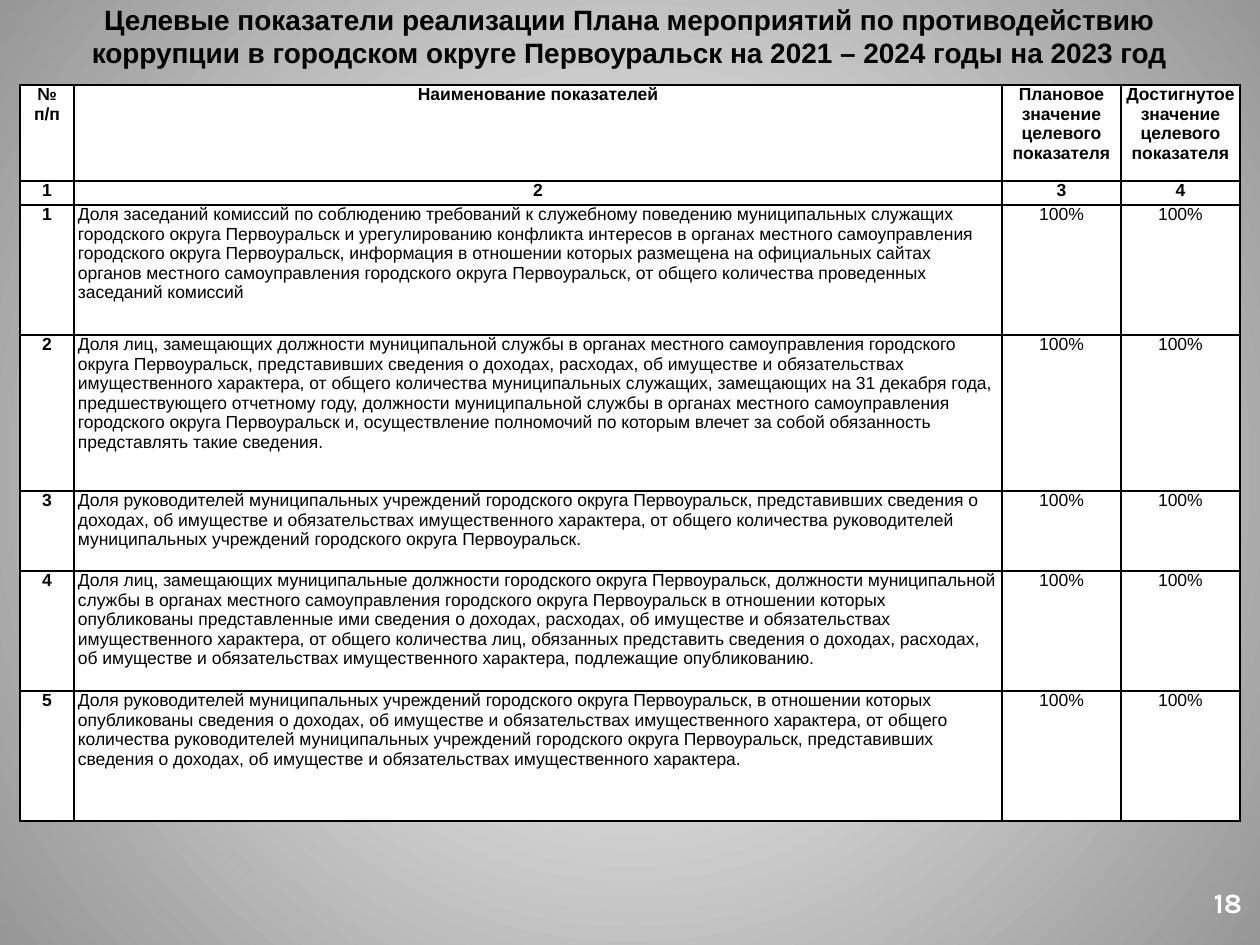
"""Builds the slide of target indicators for the anti-corruption plan."""
from pptx import Presentation, util as u
from pptx.dml.color import RGBColor
from pptx.enum import text as t
from pptx.oxml import parse_xml
from pptx.oxml.ns import nsdecls, qn

PX = 914400 / 126
MID = t.PP_ALIGN.CENTER
NS = nsdecls("a")


def px(*vals):
    return [u.Emu(round(v * PX)) for v in vals]


def write(frame, words, size, bold=True, align=MID, face="Arial", tint="000000"):
    frame.text = words
    for para in frame.paragraphs:
        para.alignment = align
        for key, val in dict(size=u.Pt(size), bold=bold, name=face).items():
            setattr(para.font, key, val)
        para.font.color.rgb = RGBColor.from_string(tint)


deck = Presentation()
deck.slide_width, deck.slide_height = px(1260, 945)
page = deck.slides.add_slide(deck.slide_layouts[5])

back = page.background.fill
back.gradient()
for stop, tint in zip(back.gradient_stops, ("FFFFFF", "979797")):
    stop.color.rgb = RGBColor.from_string(tint)
lin = page.element.find(".//" + qn("a:lin"))
lin.getparent().replace(lin, parse_xml(
    f'<a:path {NS} path="circle">'
    '<a:fillToRect l="50000" t="50000" r="50000" b="50000"/></a:path>'))

num = page.shapes.add_textbox(*px(1196, 879, 64, 47))
num.text_frame.word_wrap = True
write(num.text_frame, "18", 16, face="Karla", tint="FFFFFF")

title = page.shapes.title
for key, val in zip(("left", "top", "width", "height"), px(74, -4, 1111, 81)):
    setattr(title, key, val)
form = dict(word_wrap=True, auto_size=t.MSO_AUTO_SIZE.SHAPE_TO_FIT_TEXT,
            vertical_anchor=t.MSO_ANCHOR.TOP)
for key, val in form.items():
    setattr(title.text_frame, key, val)
write(title.text_frame,
      "Целевые показатели реализации Плана мероприятий по противодействию "
      "коррупции в городском округе Первоуральск на 2021 – 2024 годы на 2023 год", 16)

goals = [
    "Доля заседаний комиссий по соблюдению требований к служебному поведению "
    "муниципальных служащих городского округа Первоуральск и урегулированию "
    "конфликта интересов в органах местного самоуправления городского округа "
    "Первоуральск, информация в отношении которых размещена на официальных сайтах "
    "органов местного самоуправления городского округа Первоуральск, от общего "
    "количества проведенных заседаний комиссий",
    "Доля лиц, замещающих должности муниципальной службы в органах местного "
    "самоуправления городского округа Первоуральск, представивших сведения о "
    "доходах, расходах, об имуществе и обязательствах имущественного характера, от "
    "общего количества муниципальных служащих, замещающих на 31 декабря года, "
    "предшествующего отчетному году, должности муниципальной службы в органах "
    "местного самоуправления городского округа Первоуральск и, осуществление "
    "полномочий по которым влечет за собой обязанность представлять такие сведения.",
    "Доля руководителей муниципальных учреждений городского округа Первоуральск, "
    "представивших сведения о доходах, об имуществе и обязательствах имущественного "
    "характера, от общего количества руководителей муниципальных учреждений "
    "городского округа Первоуральск.",
    "Доля лиц, замещающих муниципальные должности городского округа Первоуральск, "
    "должности муниципальной службы в органах местного самоуправления городского "
    "округа Первоуральск в отношении которых опубликованы представленные ими "
    "сведения о доходах, расходах, об имуществе и обязательствах имущественного "
    "характера, от общего количества лиц, обязанных представить сведения о доходах, "
    "расходах, об имуществе и обязательствах имущественного характера, подлежащие "
    "опубликованию.",
    "Доля руководителей муниципальных учреждений городского округа Первоуральск, в "
    "отношении которых опубликованы сведения о доходах, об имуществе и "
    "обязательствах имущественного характера, от общего количества руководителей "
    "муниципальных учреждений городского округа Первоуральск, представивших "
    "сведения о доходах, об имуществе и обязательствах имущественного характера.",
]
rows = [
    ["№\nп/п", "Наименование показателей", "Плановое значение целевого показателя",
     "Достигнутое значение целевого показателя"],
    ["1", "2", "3", "4"],
]
rows += [[str(n), goal, "100%", "100%"] for n, goal in enumerate(goals, 1)]
wide = px(54, 928, 119, 119)
high = px(96, 24, 130, 156, 80, 120, 130)

grid = page.shapes.add_table(len(rows), len(wide), *px(20, 85), sum(wide), sum(high)).table
for col, size in zip(grid.columns, wide):
    col.width = size
for row, size in zip(grid.rows, high):
    row.height = size

pads = dict(zip(("margin_left", "margin_top", "margin_right", "margin_bottom"),
                px(4, 0, 4, 0)))
for r, row in enumerate(rows):
    for c, words in enumerate(row):
        cell = grid.cell(r, c)
        for key, val in pads.items():
            setattr(cell, key, val)
        cell.fill.solid()
        cell.fill.fore_color.rgb = RGBColor.from_string("FFFFFF")
        head = r < 2
        write(cell.text_frame, words, 10, bold=head or c == 0,
              align=MID if head or c != 1 else t.PP_ALIGN.LEFT)
        prop = cell._tc.get_or_add_tcPr()
        for n, side in enumerate("LRTB"):
            prop.insert(n, parse_xml(
                f'<a:ln{side} {NS} w="12700"><a:solidFill>'
                f'<a:srgbClr val="000000"/></a:solidFill></a:ln{side}>'))

deck.save("out.pptx")
